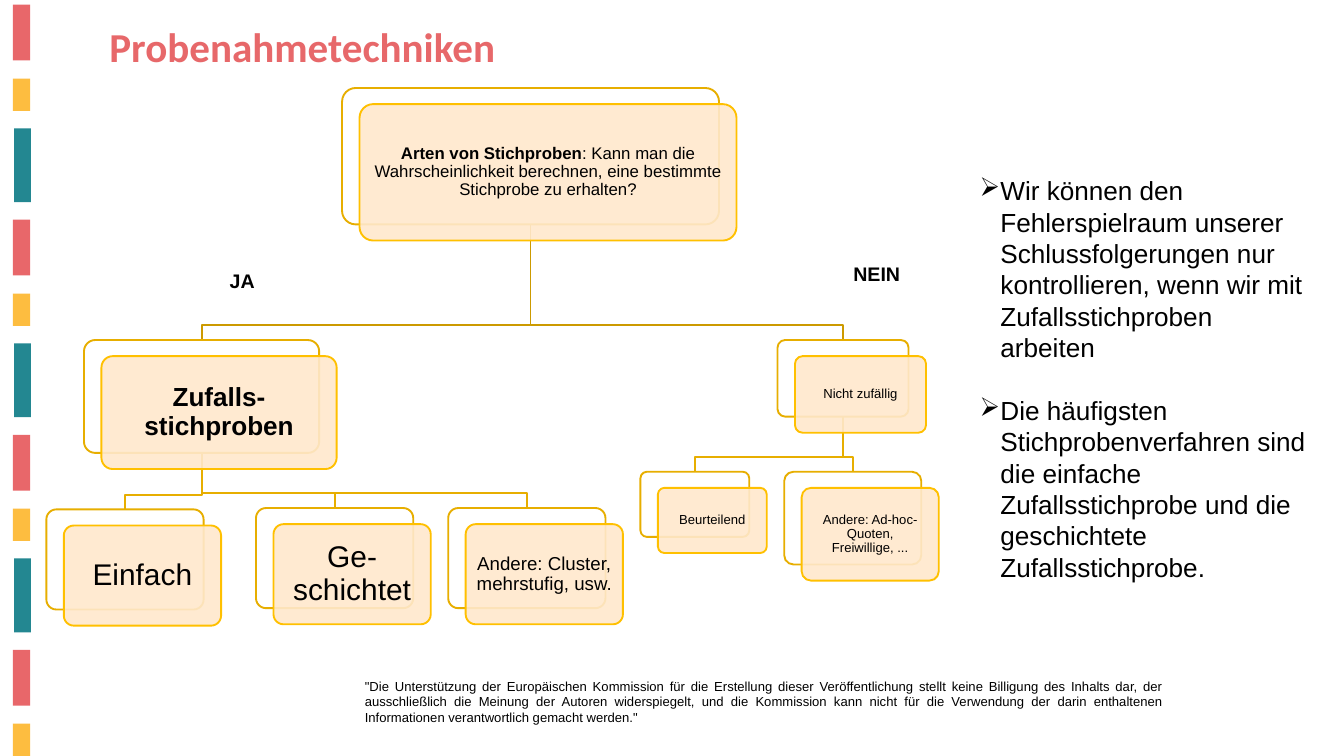
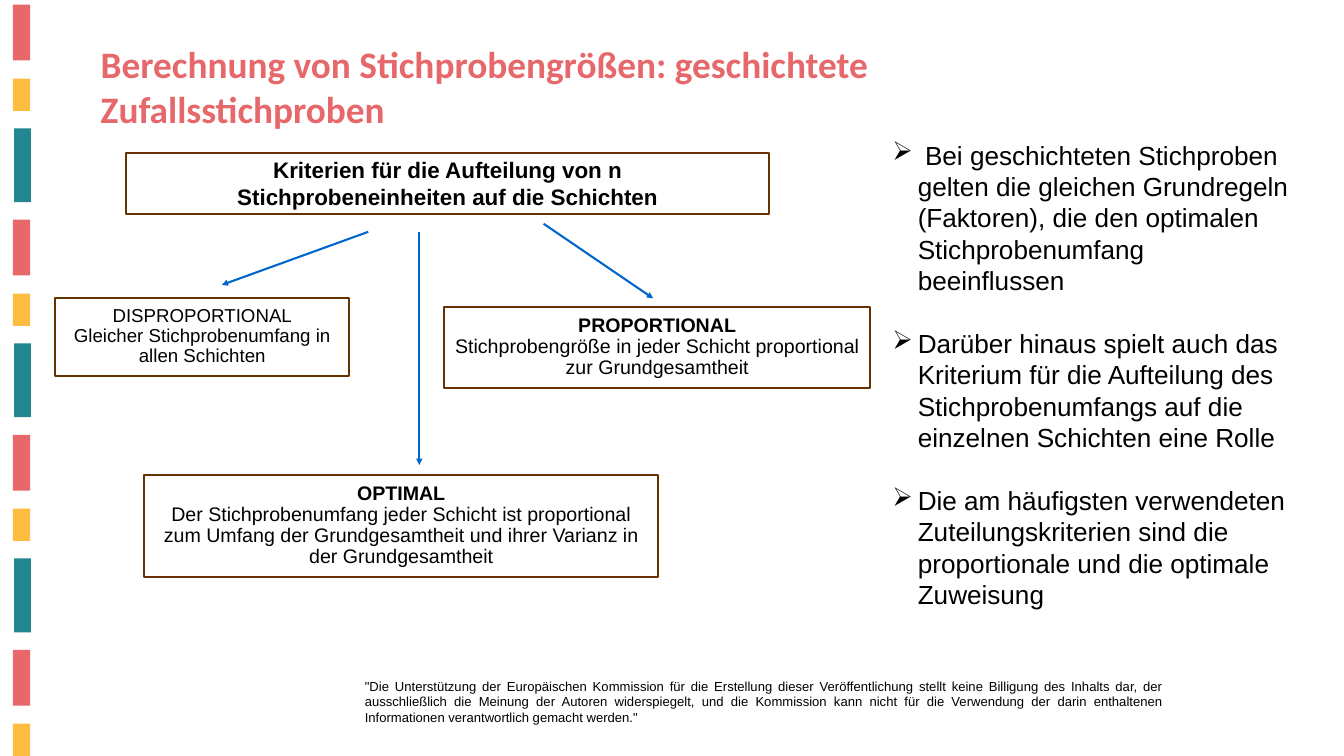
from dataclasses import dataclass, field

from lxml import etree
from pptx import Presentation
from pptx.dml.color import RGBColor
from pptx.enum.shapes import MSO_CONNECTOR, MSO_SHAPE
from pptx.enum.text import MSO_ANCHOR, PP_ALIGN
from pptx.oxml.ns import qn
from pptx.util import Inches, Pt

STRAIGHT = MSO_CONNECTOR.STRAIGHT
RECT, ROUND = MSO_SHAPE.RECTANGLE, MSO_SHAPE.ROUNDED_RECTANGLE
TOP, MIDDLE = MSO_ANCHOR.TOP, MSO_ANCHOR.MIDDLE
LEFT, CENTER, JUSTIFY = PP_ALIGN.LEFT, PP_ALIGN.CENTER, PP_ALIGN.JUSTIFY

WIDTH, HEIGHT = 20, 11.25
INK, WHITE, CORAL = "000000", "FFFFFF", "E7686A"
AMBER, GOLD, OCHRE, CREAM = "FFC000", "E7AE00", "CC9A00", "FFE8CC"
BROWN, BLUE = "663300", "0066CC"
STEP = 3.2
SHIFT_X, SHIFT_Y, ELBOW = 0.26, 0.24, 0.22

FOOTER = (
    '"Die Unterstützung der Europäischen Kommission für die Erstellung dieser '
    "Veröffentlichung stellt keine Billigung des Inhalts dar, der ausschließlich "
    "die Meinung der Autoren widerspiegelt, und die Kommission kann nicht für die "
    'Verwendung der darin enthaltenen Informationen verantwortlich gemacht werden."'
)


@dataclass
class Band:
    """A colour of the side strip, repeated down the slide."""
    left: float
    top: float
    width: float
    height: float
    color: str


@dataclass
class Node:
    """A box of the tree with the boxes below it."""
    left: float
    top: float
    width: float
    height: float
    size: int
    text: str = ""
    lead: str = ""
    link: str = GOLD
    kids: list["Node"] = field(default_factory=list)

    @property
    def mid(self) -> float:
        """Return the horizontal middle."""
        return self.left + self.width / 2


@dataclass
class Rule:
    """A framed criterion: bold lead, then plain text."""
    left: float
    top: float
    width: float
    height: float
    size: int
    lead: str
    text: str
    pad: tuple[float, float] = (0.15, 0.12)
    space: float = 0.9


BANDS = [
    Band(0.19, 0.07, 0.26, 0.83, "E8676A"),
    Band(0.19, 1.17, 0.26, 0.48, "FDBD40"),
    Band(0.21, 1.91, 0.25, 1.1, "238791"),
]

TREE = Node(
    5.09, 1.31, 5.61, 2.03, 18,
    ": Kann man die Wahrscheinlichkeit berechnen, eine bestimmte Stichprobe zu erhalten?",
    "Arten von Stichproben", OCHRE,
    [
        Node(1.25, 5.06, 3.5, 1.68, 28, lead="Zufalls-stichproben", kids=[
            Node(0.69, 7.58, 2.34, 1.49, 32, "Einfach"),
            Node(3.81, 7.56, 2.34, 1.49, 32, "Ge-schichtet"),
            Node(6.67, 7.56, 2.34, 1.49, 20, "Andere: Cluster, mehrstufig, usw."),
        ]),
        Node(11.57, 5.06, 1.95, 1.14, 14, "Nicht zufällig", kids=[
            Node(9.53, 7.02, 1.62, 0.97, 14, "Beurteilend"),
            Node(11.67, 7.02, 2.04, 1.38, 14, "Andere: Ad-hoc-Quoten, Freiwillige, ..."),
        ]),
    ],
)

RULES = [
    Rule(1.88, 2.28, 9.56, 0.91, 24,
         "Kriterien für die Aufteilung von n\nStichprobeneinheiten auf die Schichten",
         "", (0.1, 0.05), 1.0),
    Rule(0.82, 4.44, 4.38, 1.16, 20, "",
         "DISPROPORTIONAL\nGleicher Stichprobenumfang in allen Schichten"),
    Rule(2.15, 7.07, 7.64, 1.52, 21, "OPTIMAL\n",
         "Der Stichprobenumfang jeder Schicht ist proportional zum Umfang der "
         "Grundgesamtheit und ihrer Varianz in der Grundgesamtheit"),
    Rule(6.61, 4.57, 6.34, 1.21, 21, "PROPORTIONAL\n",
         "Stichprobengröße in jeder Schicht proportional zur Grundgesamtheit"),
]

ARROWS = [(5.48, 3.45, 3.3, 4.24), (6.24, 3.45, 6.24, 6.92), (8.09, 3.33, 9.72, 4.44)]

ERRORS = [
    "Wir können den Fehlerspielraum unserer Schlussfolgerungen nur kontrollieren, "
    "wenn wir mit Zufallsstichproben arbeiten",
    "Die häufigsten Stichprobenverfahren sind die einfache Zufallsstichprobe und "
    "die geschichtete Zufallsstichprobe.",
]

FACTORS = [
    " Bei geschichteten Stichproben gelten die gleichen Grundregeln (Faktoren), "
    "die den optimalen Stichprobenumfang beeinflussen",
    "Darüber hinaus spielt auch das Kriterium für die Aufteilung des "
    "Stichprobenumfangs auf die einzelnen Schichten eine Rolle",
    "Die am häufigsten verwendeten Zuteilungskriterien sind die proportionale "
    "und die optimale Zuweisung",
]


def paint(target, color: str) -> None:
    """Give a font, fill or line format a solid colour."""
    if hasattr(target, "solid"):
        target.solid()
        target.fore_color.rgb = RGBColor.from_string(color)
    else:
        target.color.rgb = RGBColor.from_string(color)


def say(para, lead: str, text: str, size: float, align=LEFT,
        color: str = INK, face: str = "Arial") -> None:
    """Write a bold lead and plain text into a paragraph."""
    para.text = lead or text
    heads = len(para.runs) if lead else 0
    if lead and text:
        para.add_run().text = text
    para.alignment = align
    for spot, run in enumerate(para.runs):
        run.font.name = face
        run.font.size = Pt(size)
        run.font.bold = spot < heads
        paint(run.font, color)


def add_box(slide, kind, left: float, top: float, width: float, height: float,
            fill: str = "", line: str = "", weight: float = 2):
    """Add a flat shape with optional fill and line."""
    box = slide.shapes.add_shape(
        kind, Inches(left), Inches(top), Inches(width), Inches(height))
    box.shadow.inherit = False
    if fill:
        paint(box.fill, fill)
    else:
        box.fill.background()
    if line:
        paint(box.line, line)
        box.line.width = Pt(weight)
    else:
        box.line.fill.background()
    return box


def add_text(slide, left: float, top: float, width: float, height: float):
    """Add a wrapping text box and return its frame."""
    box = slide.shapes.add_textbox(
        Inches(left), Inches(top), Inches(width), Inches(height))
    box.text_frame.word_wrap = True
    return box.text_frame


def set_pad(frame, side: float, end: float) -> None:
    """Set the inner margins of a text frame."""
    frame.word_wrap = True
    frame.margin_left = frame.margin_right = Inches(side)
    frame.margin_top = frame.margin_bottom = Inches(end)


def add_list(slide, left: float, top: float, width: float, height: float,
             indent: float, items: list[str]) -> None:
    """Add a list with arrowhead bullets and a line of space between."""
    frame = add_text(slide, left, top, width, height)
    for spot, item in enumerate(items):
        para = frame.add_paragraph() if spot else frame.paragraphs[0]
        props = para._p.get_or_add_pPr()
        props.set("marL", str(Inches(indent)))
        props.set("indent", str(-Inches(indent)))
        tint = etree.SubElement(props, qn("a:buClr"))
        etree.SubElement(tint, qn("a:srgbClr")).set("val", INK)
        etree.SubElement(props, qn("a:buChar")).set("char", "➢")
        say(para, "", item, 28)
        if spot:
            para.space_before = Pt(33.6)


def add_link(slide, top: Node, kid: Node) -> None:
    """Draw the bent line from a box to one below it."""
    start = top.top + top.height
    bend = kid.top - ELBOW
    path = slide.shapes.build_freeform(Inches(top.mid), Inches(start))
    spots = [(top.mid, bend), (kid.mid, bend), (kid.mid, kid.top)]
    path.add_line_segments([(Inches(x), Inches(y)) for x, y in spots], close=False)
    link = path.convert_to_shape()
    link.shadow.inherit = False
    link.fill.background()
    paint(link.line, top.link)
    link.line.width = Pt(2)


def add_links(slide, node: Node) -> None:
    """Draw all lines below a box."""
    for kid in node.kids:
        add_links(slide, kid)
        add_link(slide, node, kid)


def add_node(slide, node: Node) -> None:
    """Draw a box, its offset card and all boxes below."""
    back = add_box(slide, ROUND, node.left, node.top, node.width, node.height,
                   WHITE, GOLD)
    card = add_box(slide, ROUND, node.left + SHIFT_X, node.top + SHIFT_Y,
                   node.width, node.height, CREAM, AMBER)
    for box in (back, card):
        box.adjustments[0] = 0.1
    tint = card._element.spPr.find(qn("a:solidFill"))[0]
    etree.SubElement(tint, qn("a:alpha")).set("val", "90000")
    frame = card.text_frame
    frame.vertical_anchor = MIDDLE
    set_pad(frame, node.size / 240, node.size / 240)
    say(frame.paragraphs[0], node.lead, node.text, node.size, CENTER)
    frame.paragraphs[0].line_spacing = 0.9
    for kid in node.kids:
        add_node(slide, kid)


def add_rule(slide, rule: Rule) -> None:
    """Draw a framed criterion."""
    box = add_box(slide, RECT, rule.left, rule.top, rule.width, rule.height,
                  line=BROWN, weight=2.25)
    frame = box.text_frame
    frame.vertical_anchor = TOP
    set_pad(frame, *rule.pad)
    say(frame.paragraphs[0], rule.lead, rule.text, rule.size, CENTER)
    frame.paragraphs[0].line_spacing = rule.space


def add_arrow(slide, *ends: float) -> None:
    """Draw a blue arrow between two points."""
    arrow = slide.shapes.add_connector(STRAIGHT, *map(Inches, ends))
    paint(arrow.line, BLUE)
    arrow.line.width = Pt(2.25)
    etree.SubElement(arrow.line._get_or_add_ln(), qn("a:tailEnd")).set("type", "triangle")
    etree.SubElement(arrow._element.spPr, qn("a:effectLst"))


def add_slide(deck):
    """Add a slide with the side strip and the footer."""
    slide = deck.slides.add_slide(deck.slide_layouts[6])
    for band in BANDS:
        top = band.top
        while top < HEIGHT - band.height / 2:
            add_box(slide, RECT, band.left, top, band.width, band.height, band.color)
            top += STEP
    frame = add_text(slide, 5.33, 10.04, 12.08, 0.81)
    say(frame.paragraphs[0], "", FOOTER, 14, JUSTIFY)
    return slide


def add_title(slide, text: str, size: int, *place: float) -> None:
    """Add the coral title."""
    frame = add_text(slide, *place)
    say(frame.paragraphs[0], text, "", size, color=CORAL, face="Calibri")


def main() -> None:
    """Build both slides and save them."""
    deck = Presentation()
    deck.slide_width, deck.slide_height = Inches(WIDTH), Inches(HEIGHT)

    slide = add_slide(deck)
    add_links(slide, TREE)
    add_node(slide, TREE)
    for word, left, top in (("JA", 3.32, 3.95), ("NEIN", 12.6, 3.85)):
        say(add_text(slide, left, top, 1.18, 0.45).paragraphs[0], word, "", 21)
    add_list(slide, 14.48, 2.55, 5.1, 7.17, 0.31, ERRORS)
    add_title(slide, "Probenahmetechniken", 44, 1.53, 0.27, 6.77, 0.84)

    slide = add_slide(deck)
    for rule in RULES:
        add_rule(slide, rule)
    for ends in ARROWS:
        add_arrow(slide, *ends)
    add_title(slide, "Berechnung von Stichprobengrößen: geschichtete Zufallsstichproben",
              40, 1.4, 0.57, 13.48, 1.38)
    add_list(slide, 13.18, 2.02, 6.23, 7.2, 0.38, FACTORS)
    deck.save("out.pptx")


if __name__ == "__main__":
    main()
